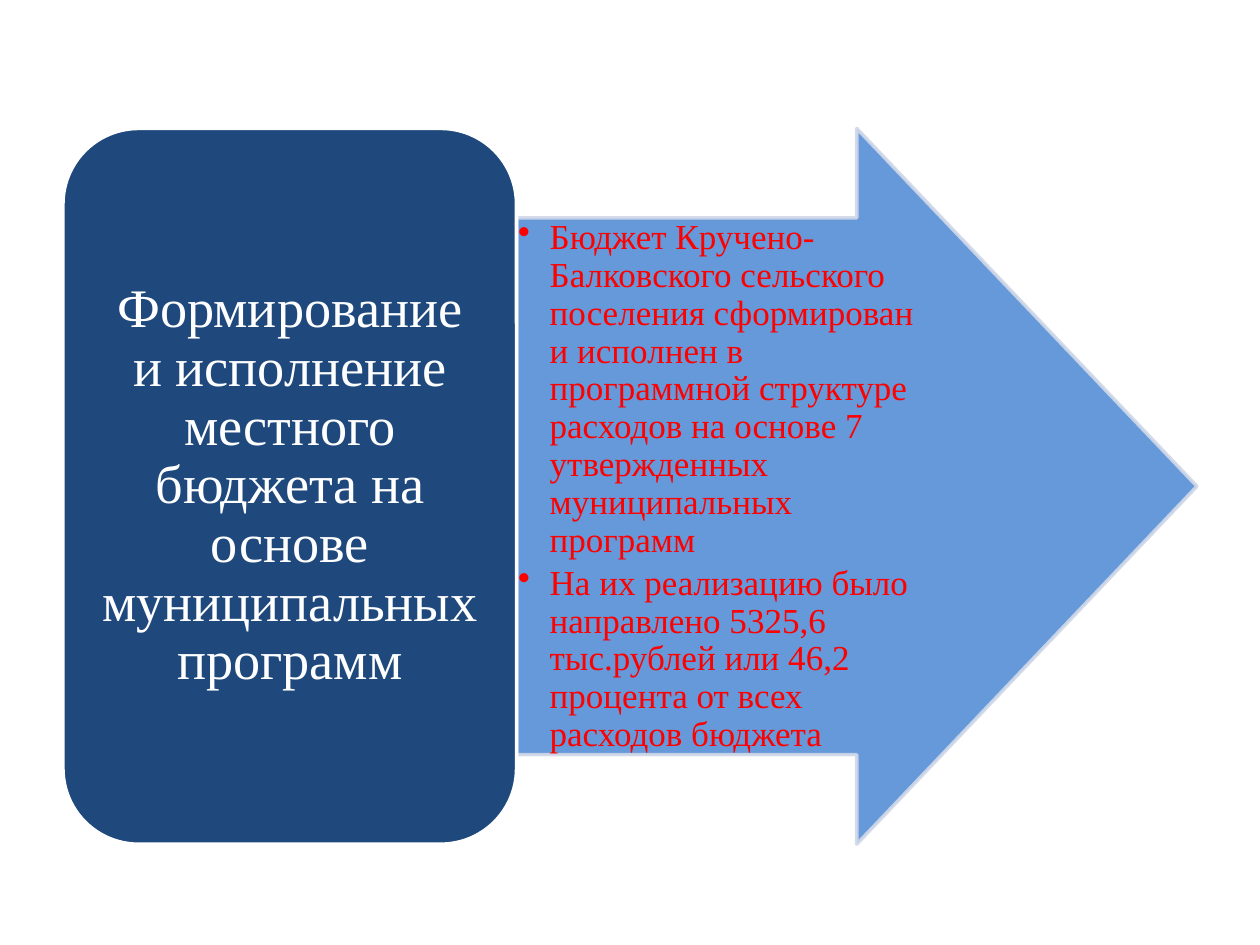
from lxml.etree import SubElement
from pptx import Presentation
from pptx.dml.color import RGBColor
from pptx.enum.shapes import MSO_SHAPE as Shape
from pptx.enum.text import MSO_ANCHOR as Anchor, PP_ALIGN as Align
from pptx.oxml.ns import qn
from pptx.util import Pt

NAVY = RGBColor(0x1F, 0x49, 0x7D)
BLUE = RGBColor(0x55, 0x8E, 0xD5)
PALE = RGBColor(0xD0, 0xD8, 0xE8)
RED = RGBColor(0xFF, 0x00, 0x00)
WHITE = RGBColor(0xFF, 0xFF, 0xFF)

TOPIC = "Формирование и исполнение местного бюджета на основе муниципальных программ"
RESULTS = [
    "Бюджет Кручено-Балковского сельского поселения сформирован и исполнен "
    "в программной структуре расходов на основе 7 утвержденных муниципальных программ",
    "На их реализацию было направлено 5325,6 тыс.рублей или 46,2 процента "
    "от всех расходов бюджета",
]


def add_panel(slide, kind, box, fill, line, opacity=100):
    panel = slide.shapes.add_shape(kind, *map(Pt, box))
    panel.shadow.inherit = False
    panel.fill.solid()
    panel.fill.fore_color.rgb = fill
    panel.line.color.rgb = line
    panel.line.width = Pt(2)
    if opacity < 100:
        for color in panel._element.spPr.iter(qn("a:srgbClr")):
            SubElement(color, qn("a:alpha"), val=str(opacity * 1000))
    return panel


def add_text(slide, box, paragraphs, size, color, align=Align.LEFT,
             anchor=Anchor.TOP, inset=(0, 0), after=0, bullet_indent=0):
    frame = slide.shapes.add_textbox(*map(Pt, box)).text_frame
    frame.word_wrap = True
    frame.vertical_anchor = anchor
    frame.margin_left = frame.margin_right = Pt(inset[0])
    frame.margin_top = frame.margin_bottom = Pt(inset[1])
    for index, text in enumerate(paragraphs):
        paragraph = frame.paragraphs[0] if index == 0 else frame.add_paragraph()
        if bullet_indent:
            properties = paragraph._p.get_or_add_pPr()
            properties.set("marL", str(Pt(bullet_indent)))
            properties.set("indent", str(-Pt(bullet_indent)))
            SubElement(properties, qn("a:buChar"), char="•")
        paragraph.alignment = align
        paragraph.line_spacing = 0.9
        paragraph.space_after = Pt(after)
        run = paragraph.add_run()
        run.text = text
        run.font.name = "Times New Roman"
        run.font.size = Pt(size)
        run.font.color.rgb = color


def add_results_arrow(slide, left, top, width, height):
    arrow = add_panel(slide, Shape.RIGHT_ARROW, (left, top, width, height), BLUE, PALE, 90)
    shaft, head = 0.75, 0.5
    arrow.adjustments[0] = shaft
    arrow.adjustments[1] = head
    head_length = head * min(width, height)
    text_width = width - head_length * shaft
    text_top = top + height * (1 - shaft) / 2
    add_text(slide, (left, text_top, text_width, height * shaft), RESULTS, 20, RED,
             inset=(0.9, 0.9), after=3, bullet_indent=18)


def add_topic_card(slide, left, top, width, height):
    add_panel(slide, Shape.ROUNDED_RECTANGLE, (left, top, width, height), NAVY, WHITE)
    pad = 12.65
    add_text(slide, (left + pad, top + pad, width - 2 * pad, height - 2 * pad), [TOPIC],
             31, WHITE, align=Align.CENTER, anchor=Anchor.MIDDLE, inset=(9.3, 4.6), after=10.85)


def main():
    deck = Presentation()
    deck.slide_width, deck.slide_height = Pt(720), Pt(540)
    slide = deck.slides.add_slide(deck.slide_layouts[6])
    left, top, width, height = 36, 73.4, 648, 409
    card_width = width * 0.4
    add_results_arrow(slide, left + card_width, top, width - card_width, height)
    add_topic_card(slide, left, top, card_width, height)
    deck.save("out.pptx")


if __name__ == "__main__":
    main()
